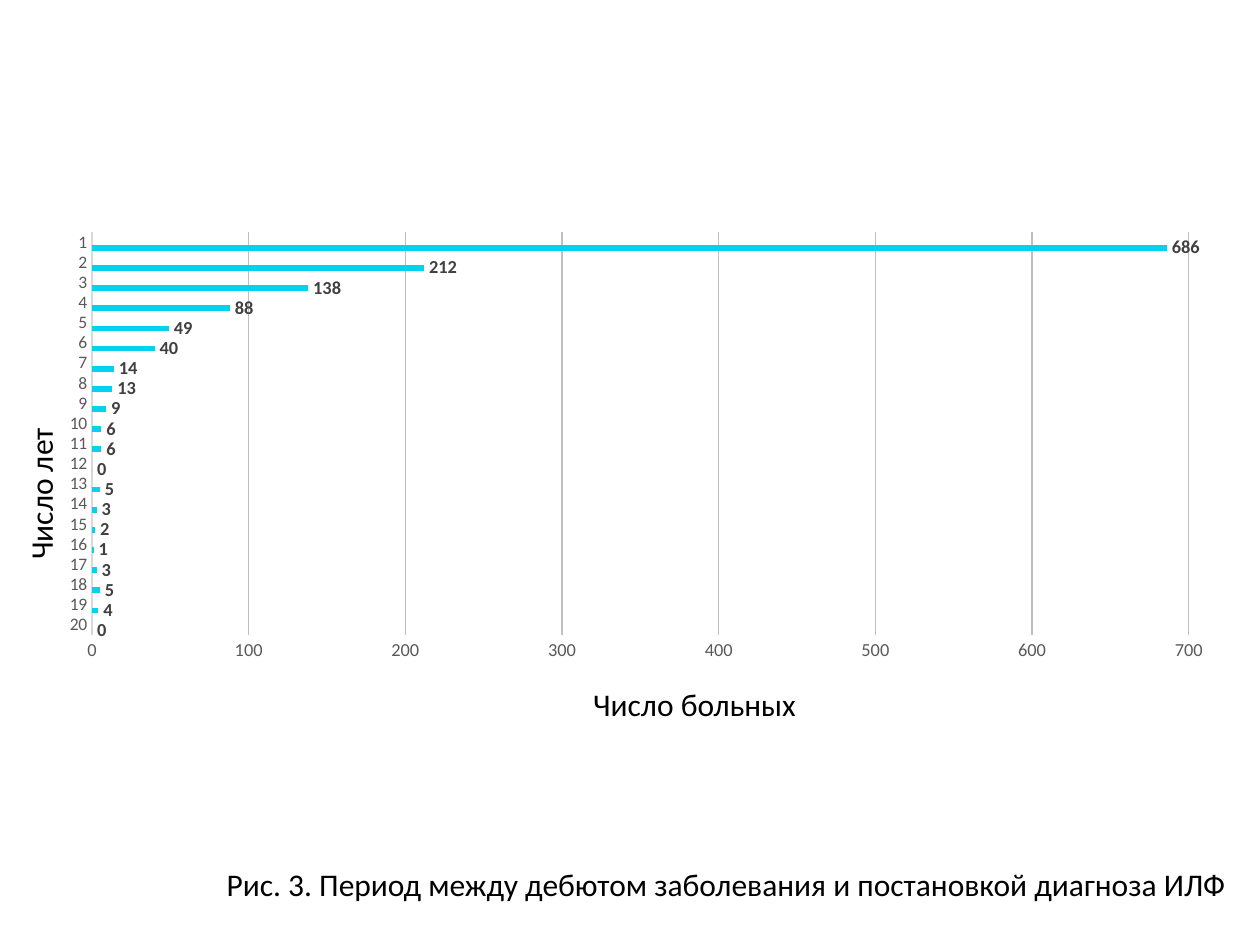
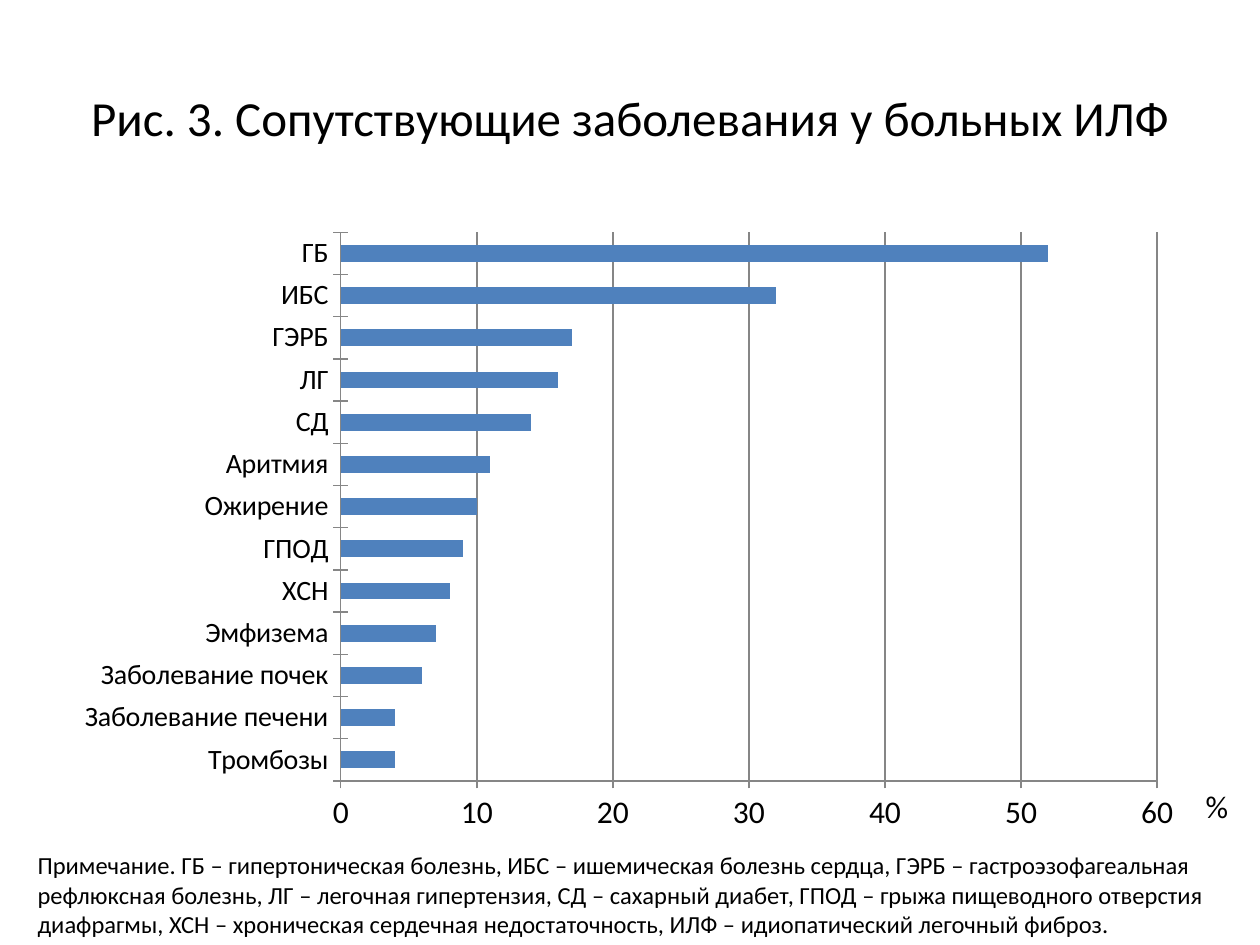
"""Builds two slides of bar charts about patients with ИЛФ."""
import pptx
import pptx.chart.data
import pptx.dml.color
import pptx.enum.chart
import pptx.enum.text
import pptx.oxml
import pptx.oxml.ns
import pptx.util

Inches, Pt = pptx.util.Inches, pptx.util.Pt
Kind = pptx.enum.chart.XL_CHART_TYPE
Tick = pptx.enum.chart.XL_TICK_MARK
FONT = "Calibri"
BLACK = "000000"

DELAY = [686, 212, 138, 88, 49, 40, 14, 13, 9, 6, 6, 0, 5, 3, 2, 1, 3, 5, 4, 0]
ILLS = [
    ("ГБ", 52), ("ИБС", 32), ("ГЭРБ", 17), ("ЛГ", 16), ("СД", 14),
    ("Аритмия", 11), ("Ожирение", 10), ("ГПОД", 9), ("ХСН", 8),
    ("Эмфизема", 7), ("Заболевание почек", 6), ("Заболевание печени", 4),
    ("Тромбозы", 4),
]

CHARTS = [
    dict(kind=Kind.BAR_CLUSTERED, box=(0.36, 1.69, 9.28, 3.71),
         plot=(0.04, 0.041, 0.938, 0.862),
         rows=[(str(year), count) for year, count in enumerate(DELAY, 1)],
         fills=["02D2EE", "C0504D", "9BBB59"], gap=50, top=700, step=100,
         sizes=(10, 10.5), ink="595959", grid="BFBFBF", edge="D9D9D9",
         base=None, tick=Tick.NONE, label="404040"),
    dict(kind=Kind.BAR_STACKED, box=(0.5, 1.75, 9, 4.95),
         plot=(0.245, 0.019, 0.72, 0.88),
         rows=ILLS, fills=["4F81BD"], gap=150, top=60, step=10,
         sizes=(16, 18), ink=BLACK, grid="868686", edge="868686",
         base="868686", tick=Tick.CROSS, label=None),
]

TEXTS = [
    [
        dict(text="Число лет", box=(-0.31, 3.71, 1.26, 0.4), turn=270),
        dict(text="Число больных", box=(4.61, 5.39, 1.83, 0.4)),
        dict(text="Рис. 3. Период между дебютом заболевания и постановкой диагноза ИЛФ",
             box=(1.7, 6.82, 8.22, 0.4)),
    ],
    [
        dict(text="Рис. 3. Сопутствующие заболевания у больных ИЛФ",
             box=(0.5, 0.3, 9, 1.25), size=28, title=True),
        dict(text="%", box=(9.47, 6.2, 0.38, 0.4)),
        dict(text="Примечание. ГБ – гипертоническая болезнь, ИБС – ишемическая болезнь сердца, ГЭРБ – гастроэзофагеальная\n"
                  "рефлюксная болезнь, ЛГ – легочная гипертензия, СД – сахарный диабет, ГПОД – грыжа пищеводного отверстия\n"
                  "диафрагмы, ХСН – хроническая сердечная недостаточность, ИЛФ – идиопатический легочный фиброз.",
             box=(0.2, 6.7, 9.53, 0.81), size=14),
    ],
]


def color(code):
    return pptx.dml.color.RGBColor.from_string(code)


def style(font, size, ink=BLACK, bold=False):
    font.name, font.size, font.bold = FONT, Pt(size), bold
    font.color.rgb = color(ink)


def stroke(line, code):
    if code is None:
        line.fill.background()
    else:
        line.color.rgb = color(code)
        line.width = Pt(0.75)


def add_text(slide, text, box, size=18, turn=0, title=False):
    shape = slide.shapes.add_textbox(*map(Inches, box))
    shape.rotation = turn
    frame = shape.text_frame
    frame.text = text
    frame.word_wrap = title
    if title:
        frame.vertical_anchor = pptx.enum.text.MSO_ANCHOR.MIDDLE
    for para in frame.paragraphs:
        if title:
            para.alignment = pptx.enum.text.PP_ALIGN.CENTER
        for run in para.runs:
            style(run.font, size)


def set_plot(chart, plot):
    qn = pptx.oxml.ns.qn
    area = chart.element.find(".//" + qn("c:plotArea"))
    for old in area.findall(qn("c:layout")):
        area.remove(old)
    spots = "".join(f'<c:{name} val="{val}"/>' for name, val in zip("xywh", plot))
    area.insert(0, pptx.oxml.parse_xml(
        f'<c:layout {pptx.oxml.ns.nsdecls("c")}><c:manualLayout>'
        '<c:layoutTarget val="inner"/><c:xMode val="edge"/><c:yMode val="edge"/>'
        f'{spots}</c:manualLayout></c:layout>'))


def add_chart(slide, part):
    rows = part["rows"][::-1]
    data = pptx.chart.data.CategoryChartData()
    data.categories = [name for name, _ in rows]
    for num in range(len(part["fills"])):
        vals = [None if num else val for _, val in rows]
        data.add_series(f"Series {num + 1}", vals)
    chart = slide.shapes.add_chart(part["kind"], *map(Inches, part["box"]), data).chart
    chart.has_legend = chart.has_title = False
    style(chart.font, part["sizes"][1])
    set_plot(chart, part["plot"])

    bars = chart.plots[0]
    bars.gap_width = part["gap"]
    bars.vary_by_categories = False
    for group, fill in zip(bars.series, part["fills"]):
        group.format.fill.solid()
        group.format.fill.fore_color.rgb = color(fill)
    if part["label"]:
        marks = bars.series[0].data_labels
        marks.show_value = True
        marks.position = pptx.enum.chart.XL_LABEL_POSITION.OUTSIDE_END
        style(marks.font, part["sizes"][1], part["label"], True)

    axes = (chart.category_axis, chart.value_axis)
    for axis, size, edge in zip(axes, part["sizes"], (part["edge"], part["base"])):
        style(axis.tick_labels.font, size, part["ink"])
        axis.major_tick_mark = part["tick"]
        axis.minor_tick_mark = Tick.NONE
        stroke(axis.format.line, edge)
    scale = chart.value_axis
    scale.minimum_scale, scale.maximum_scale = 0, part["top"]
    scale.major_unit = part["step"]
    scale.has_major_gridlines = True
    stroke(scale.major_gridlines.format.line, part["grid"])


def main():
    deck = pptx.Presentation()
    deck.slide_width, deck.slide_height = Inches(10), Inches(7.5)
    for part, texts in zip(CHARTS, TEXTS):
        slide = deck.slides.add_slide(deck.slide_layouts[6])
        add_chart(slide, part)
        for item in texts:
            add_text(slide, **item)
    deck.save("out.pptx")


if __name__ == "__main__":
    main()
